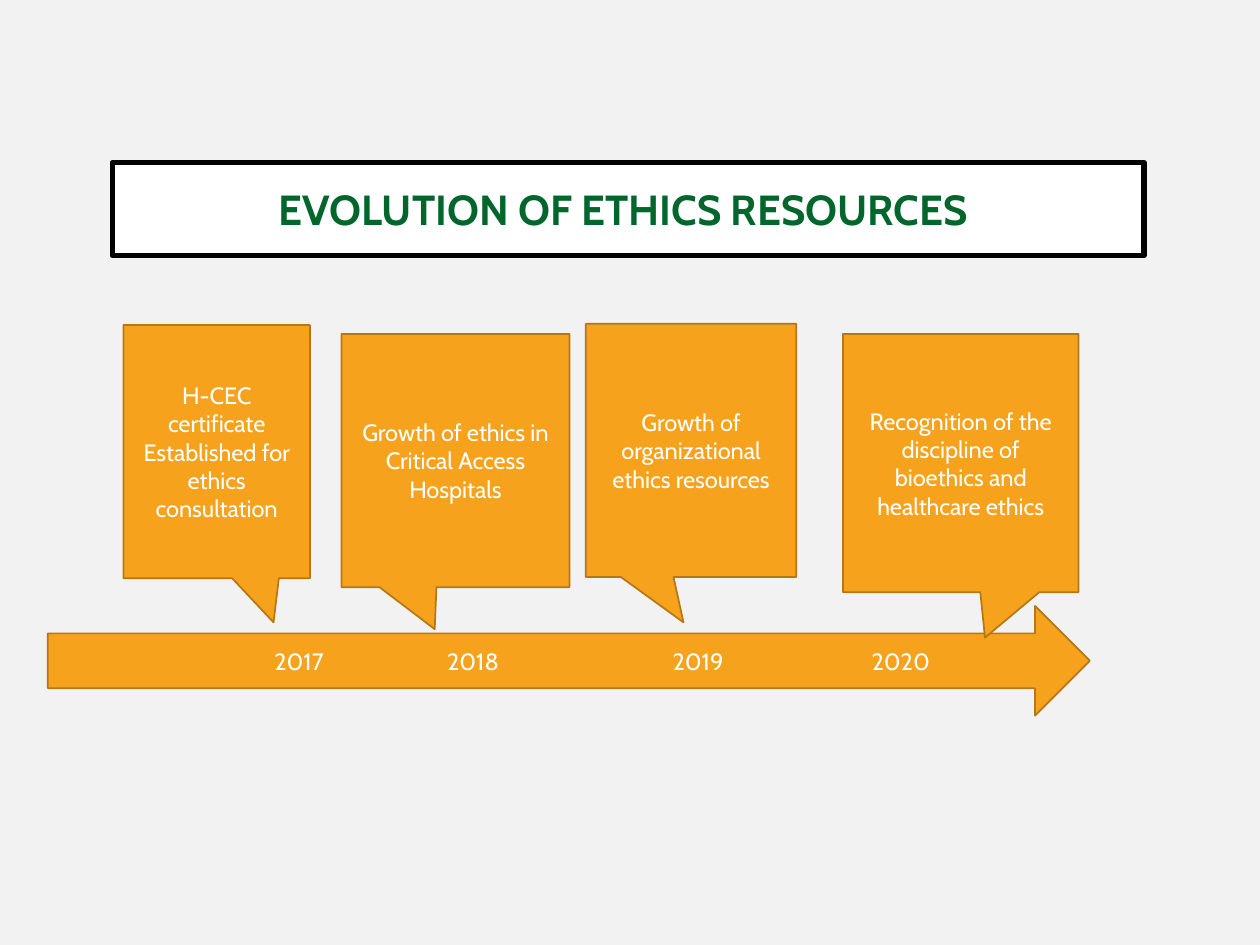
import dataclasses

import lxml.etree
import pptx
import pptx.dml.color
import pptx.enum.shapes
import pptx.enum.text
import pptx.oxml.ns
import pptx.shapes.autoshape
import pptx.slide
import pptx.util

Inches = pptx.util.Inches
RGBColor = pptx.dml.color.RGBColor
Shapes = pptx.enum.shapes.MSO_SHAPE
Align = pptx.enum.text.PP_ALIGN

BACKGROUND = RGBColor(0xF2, 0xF2, 0xF2)
ORANGE = RGBColor(0xF6, 0xA2, 0x1D)
BROWN = RGBColor(0xB6, 0x78, 0x15)
WHITE = RGBColor(0xFF, 0xFF, 0xFF)
BLACK = RGBColor(0x00, 0x00, 0x00)
GREEN = RGBColor(0x00, 0x66, 0x2C)
FONT = "Cabin"


@dataclasses.dataclass(frozen=True)
class Box:
    left: float
    top: float
    width: float
    height: float


@dataclasses.dataclass(frozen=True)
class Style:
    fill: RGBColor
    line: RGBColor
    line_width: float
    text: RGBColor
    size: float
    bold: bool = False


@dataclasses.dataclass(frozen=True)
class Milestone:
    year: str
    year_offset: float
    text: str
    box: Box
    pointer: tuple[float, float]


TIMELINE_STYLE = Style(ORANGE, BROWN, 1, WHITE, 13.5)
TITLE_STYLE = Style(WHITE, BLACK, 3, GREEN, 24, True)
TITLE_BOX = Box(0.89, 1.29, 8.19, 0.74)
ARROW_BOX = Box(0.38, 4.81, 8.27, 0.87)

MILESTONES = [
    Milestone("2017", 1.7, "H-CEC certificate\nEstablished for ethics consultation",
              Box(0.98, 2.58, 1.48, 2.01), (0.305, 0.674)),
    Milestone("2018", 3.07, "Growth of ethics in Critical Access Hospitals",
              Box(2.71, 2.65, 1.81, 2.01), (-0.091, 0.666)),
    Milestone("2019", 4.86, "Growth of organizational ethics resources",
              Box(4.65, 2.57, 1.67, 2.01), (-0.036, 0.679)),
    Milestone("2020", 6.44, "Recognition of the discipline of bioethics and healthcare ethics",
              Box(6.69, 2.65, 1.87, 2.05), (0.103, 0.676)),
]


def add_text_shape(
    slide: pptx.slide.Slide, kind: Shapes, box: Box, text: str, style: Style
) -> pptx.shapes.autoshape.Shape:
    shape = slide.shapes.add_shape(
        kind, Inches(box.left), Inches(box.top), Inches(box.width), Inches(box.height)
    )
    shape.shadow.inherit = False
    shape.fill.solid()
    shape.fill.fore_color.rgb = style.fill
    shape.line.color.rgb = style.line
    shape.line.width = pptx.util.Pt(style.line_width)
    text_frame = shape.text_frame
    text_frame.word_wrap = True
    text_frame.vertical_anchor = pptx.enum.text.MSO_ANCHOR.MIDDLE
    text_frame.text = text
    for paragraph in text_frame.paragraphs:
        paragraph.alignment = Align.CENTER
        for run in paragraph.runs:
            run.font.name = FONT
            run.font.size = pptx.util.Pt(style.size)
            run.font.bold = style.bold
            run.font.color.rgb = style.text
    return shape


def add_timeline(slide: pptx.slide.Slide, milestones: list[Milestone]) -> None:
    years = "".join(f"\t{milestone.year}" for milestone in milestones)
    arrow = add_text_shape(slide, Shapes.RIGHT_ARROW, ARROW_BOX, years, TIMELINE_STYLE)
    paragraph = arrow.text_frame.paragraphs[0]
    paragraph.alignment = Align.LEFT
    properties = paragraph._p.get_or_add_pPr()
    tab_list = lxml.etree.SubElement(properties, pptx.oxml.ns.qn("a:tabLst"))
    for milestone in milestones:
        tab = lxml.etree.SubElement(tab_list, pptx.oxml.ns.qn("a:tab"))
        tab.set("pos", str(Inches(milestone.year_offset)))
        tab.set("algn", "l")


def add_callout(slide: pptx.slide.Slide, milestone: Milestone) -> None:
    callout = add_text_shape(
        slide, Shapes.RECTANGULAR_CALLOUT, milestone.box, milestone.text, TIMELINE_STYLE
    )
    for index, offset in enumerate(milestone.pointer):
        callout.adjustments[index] = offset


def add_title(slide: pptx.slide.Slide) -> None:
    title = add_text_shape(
        slide, Shapes.RECTANGLE, TITLE_BOX, "EVOLUTION OF ETHICS RESOURCES", TITLE_STYLE
    )
    text_frame = title.text_frame
    text_frame.margin_left = Inches(0.07)
    text_frame.margin_right = Inches(0.15)
    text_frame.margin_top = text_frame.margin_bottom = Inches(0.04)


def main() -> None:
    presentation = pptx.Presentation()
    presentation.slide_width = Inches(10)
    presentation.slide_height = Inches(7.5)
    slide = presentation.slides.add_slide(presentation.slide_layouts[6])
    slide.background.fill.solid()
    slide.background.fill.fore_color.rgb = BACKGROUND
    add_timeline(slide, MILESTONES)
    for milestone in MILESTONES:
        add_callout(slide, milestone)
    add_title(slide)
    presentation.save("out.pptx")


if __name__ == "__main__":
    main()
